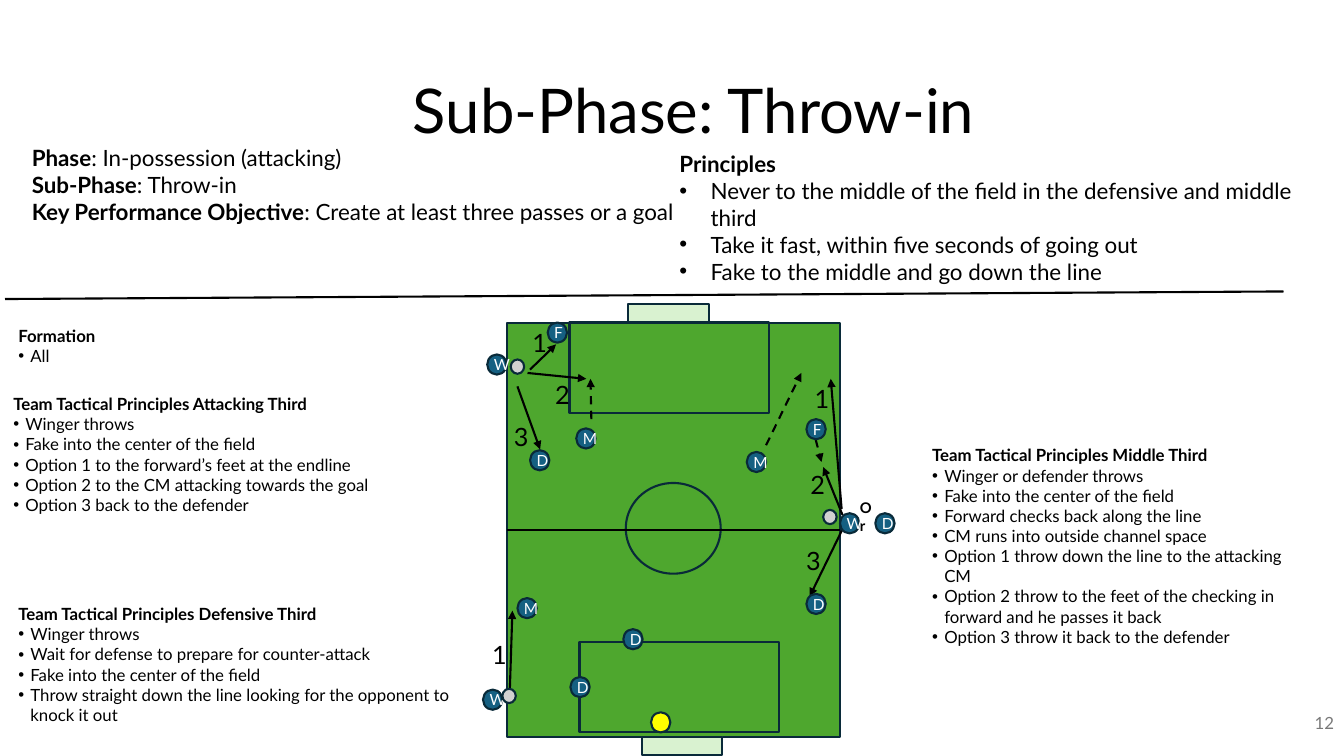
"""Build the throw-in slide: tactical notes around a football pitch."""
from lxml.etree import SubElement
from pptx import Presentation
from pptx.dml.color import RGBColor
from pptx.enum.dml import MSO_LINE
from pptx.enum.shapes import MSO_CONNECTOR, MSO_SHAPE
from pptx.enum.text import MSO_ANCHOR, PP_ALIGN
from pptx.oxml.ns import qn
from pptx.util import Inches, Pt

BLACK = RGBColor(0x00, 0x00, 0x00)
WHITE = RGBColor(0xFF, 0xFF, 0xFF)
GREY = RGBColor(0x79, 0x79, 0x79)
GRASS = RGBColor(0x4E, 0xA7, 0x2E)
MINT = RGBColor(0xD9, 0xF2, 0xD0)
NAVY = RGBColor(0x09, 0x2A, 0x39)
BLUE = RGBColor(0x15, 0x60, 0x82)
YELLOW = RGBColor(0xFF, 0xFF, 0x00)
SILVER = RGBColor(0xD1, 0xD1, 0xD1)

deck = Presentation()
deck.slide_width, deck.slide_height = Inches(13.33), Inches(7.5)
COL, ROW = deck.slide_width / 160, deck.slide_height / 90
slide = deck.slides.add_slide(deck.slide_layouts[5])
shapes = slide.shapes


def draw(group, kind, x, y, w, h, fill=None):
    """Add an outlined shape placed by grid columns and rows."""
    shape = group.add_shape(kind, int(x * COL), int(y * ROW), int(w * COL), int(h * ROW))
    shape.shadow.inherit = False
    shape.line.color.rgb, shape.line.width = NAVY, Pt(1.5)
    if fill is None:
        shape.fill.background()
    else:
        shape.fill.solid()
        shape.fill.fore_color.rgb = fill
    return shape


def write(shape, lines, size, color=BLACK, indent=0.12, **form):
    """Fill a shape with lines: '*' marks a bullet, '|' ends the bold part."""
    frame = shape.text_frame
    frame.word_wrap = form.pop("wrap", True)
    frame.vertical_anchor = form.pop("anchor", MSO_ANCHOR.TOP)
    for i, line in enumerate(lines):
        para = frame.add_paragraph() if i else frame.paragraphs[0]
        if line.startswith("*"):
            props = para._p.get_or_add_pPr()
            props.set("marL", str(Inches(indent)))
            props.set("indent", str(-Inches(indent)))
            SubElement(props, qn("a:buFont")).set("typeface", "Arial")
            SubElement(props, qn("a:buChar")).set("char", "•")
        for name, value in form.items():
            setattr(para, name, value)
        head, bar, rest = line.lstrip("*").partition("|")
        for text, bold in ((head, bool(bar)), (rest, False)):
            if text:
                run = para.add_run()
                run.text = text
                looks = {"name": "Lato", "size": Pt(size), "bold": bold}
                for name, value in looks.items():
                    setattr(run.font, name, value)
                run.font.color.rgb = color


group = shapes.add_group_shape().shapes
RECT, OVAL = MSO_SHAPE.RECTANGLE, MSO_SHAPE.OVAL
pitch = draw(group, RECT, 60.4, 38.4, 39.6, 49.3, GRASS)
for x, y in ((74.8, 36.2), (76.4, 87.7)):
    draw(group, RECT, x, y, 9.6, 2.2, MINT)
for x, y in ((67.8, 38.4), (69, 76.4)):
    draw(group, RECT, x, y, 23.8, 10.8)
draw(group, OVAL, 74.5, 57.5, 11.3, 10.8)
half = group.add_connector(MSO_CONNECTOR.STRAIGHT, 0, 0, 0, 0)
half.begin_connect(pitch, 1)
half.end_connect(pitch, 3)

title = shapes.title
spot = {"left": 16.2 * COL, "top": 4.8 * ROW, "width": 132.8 * COL, "height": 17.4 * ROW}
for name, value in spot.items():
    setattr(title, name, int(value))
write(title, ["Sub-Phase: Throw-in"], 44, anchor=MSO_ANCHOR.MIDDLE,
      alignment=PP_ALIGN.CENTER, line_spacing=0.9)

ROUTES = (
    (0.6, 35.6, 152.8, 34.7, "rule"),
    (100.2, 60.6, 98.9, 45.1, "pass"),
    (100.3, 61.3, 98, 55.6, "pass"),
    (100.3, 63, 96.4, 71, "pass"),
    (63.1, 44, 66.2, 41, "pass"),
    (62.8, 44.4, 69.8, 45.1, "pass"),
    (61.6, 46, 64.3, 53.5, "pass"),
    (60.7, 82.1, 61, 72.7, "pass"),
    (97.1, 52.3, 97.8, 55, "run"),
    (91.2, 53, 95.4, 44.4, "run"),
    (70.4, 49.9, 70.3, 45.1, "run"),
)
links = [(half, "rule")]
for x, y, x2, y2, role in ROUTES:
    link = shapes.add_connector(MSO_CONNECTOR.STRAIGHT, int(x * COL), int(y * ROW),
                                int(x2 * COL), int(y2 * ROW))
    links.append((link, role))
for link, role in links:
    link.line.color.rgb, link.line.width = BLACK, Pt(1.5)
    if role == "run":
        link.line.dash_style = MSO_LINE.DASH
    if role != "rule":
        SubElement(link.line._get_or_add_ln(), qn("a:tailEnd")).set("type", "triangle")
    SubElement(link._element.spPr, qn("a:effectLst"))

TEAM = {
    "W": ((58, 42.2), (100, 61.1), (57.5, 82.1)),
    "F": ((96, 49.9), (65.2, 38.4)),
    "M": ((68.6, 51), (88.9, 53.8), (61.6, 71.2)),
    "D": ((67.9, 80.6), (74.2, 74.9), (96, 70.7), (104.2, 61.1), (63.1, 53.6)),
}
for role, spots in TEAM.items():
    for x, y in spots:
        man = draw(shapes, OVAL, x, y, 2.3, 2.4, BLUE)
        write(man, [role], 11, WHITE, anchor=MSO_ANCHOR.MIDDLE, alignment=PP_ALIGN.CENTER)
draw(shapes, OVAL, 77.5, 84.8, 2.3, 2.4, YELLOW)
for x, y in ((98, 60.7), (60.8, 42.8), (59.8, 82)):
    draw(shapes, OVAL, x, y, 1.6, 1.7, SILVER)

BIG, SMALL = {"size": 16, "indent": 0.31}, {"size": 12}
MARK = {"size": 18, "wrap": False}
PAGE = {"size": 12, "color": GREY, "anchor": MSO_ANCHOR.MIDDLE, "alignment": PP_ALIGN.RIGHT}
NOTES = [
    (2.6, 16.6, 80, 14.2, BIG, [
        "Phase|: In-possession (attacking)",
        "Sub-Phase|: Throw-in",
        "Key Performance Objective|: Create at least three passes or a goal"]),
    (79.7, 17.3, 80, 14.2, BIG, [
        "Principles|",
        "*Never to the middle of the field in the defensive and middle third",
        "*Take it fast, within five seconds of going out",
        "*Fake to the middle and go down the line"]),
    (1, 38.2, 49, 6, SMALL, ["Formation|", "*All"]),
    (0.4, 46.3, 56.8, 18.1, SMALL, [
        "Team Tactical Principles Attacking Third|",
        "*Winger throws",
        "*Fake into the center of the field",
        "*Option 1 to the forward’s feet at the endline",
        "*Option 2 to the CM attacking towards the goal",
        "*Option 3 back to the defender"]),
    (1, 71.3, 55.8, 18.1, SMALL, [
        "Team Tactical Principles Defensive Third|",
        "*Winger throws",
        "*Wait for defense to prepare for counter-attack",
        "*Fake into the center of the field",
        "*Throw straight down the line looking for the opponent to knock it out"]),
    (109.8, 52.4, 47, 23, SMALL, [
        "Team Tactical Principles Middle Third|",
        "*Winger or defender throws",
        "*Fake into the center of the field",
        "*Forward checks back along the line",
        "*CM runs into outside channel space",
        "*Option 1 throw down the line to the attacking CM",
        "*Option 2 throw to the feet of the checking in forward and he passes it back",
        "*Option 3 throw it back to the defender"]),
    (101.2, 58.8, 4.3, 3.5, {"size": 10.5}, ["Or|"]),
    (124, 83.6, 36, 4.8, PAGE, ["12"]),
]
STEPS = {
    "1": ((95.8, 45.1), (62.2, 38.4), (57.4, 75.5)),
    "2": ((64.9, 44.6), (95.3, 55.3)),
    "3": ((94.8, 64.3), (60, 49.6)),
}
NOTES += [(x, y, 4.1, 4.8, MARK, [step]) for step, spots in STEPS.items() for x, y in spots]
for x, y, w, h, form, lines in NOTES:
    note = shapes.add_textbox(int(x * COL), int(y * ROW), int(w * COL), int(h * ROW))
    write(note, lines, **form)

deck.save("out.pptx")
